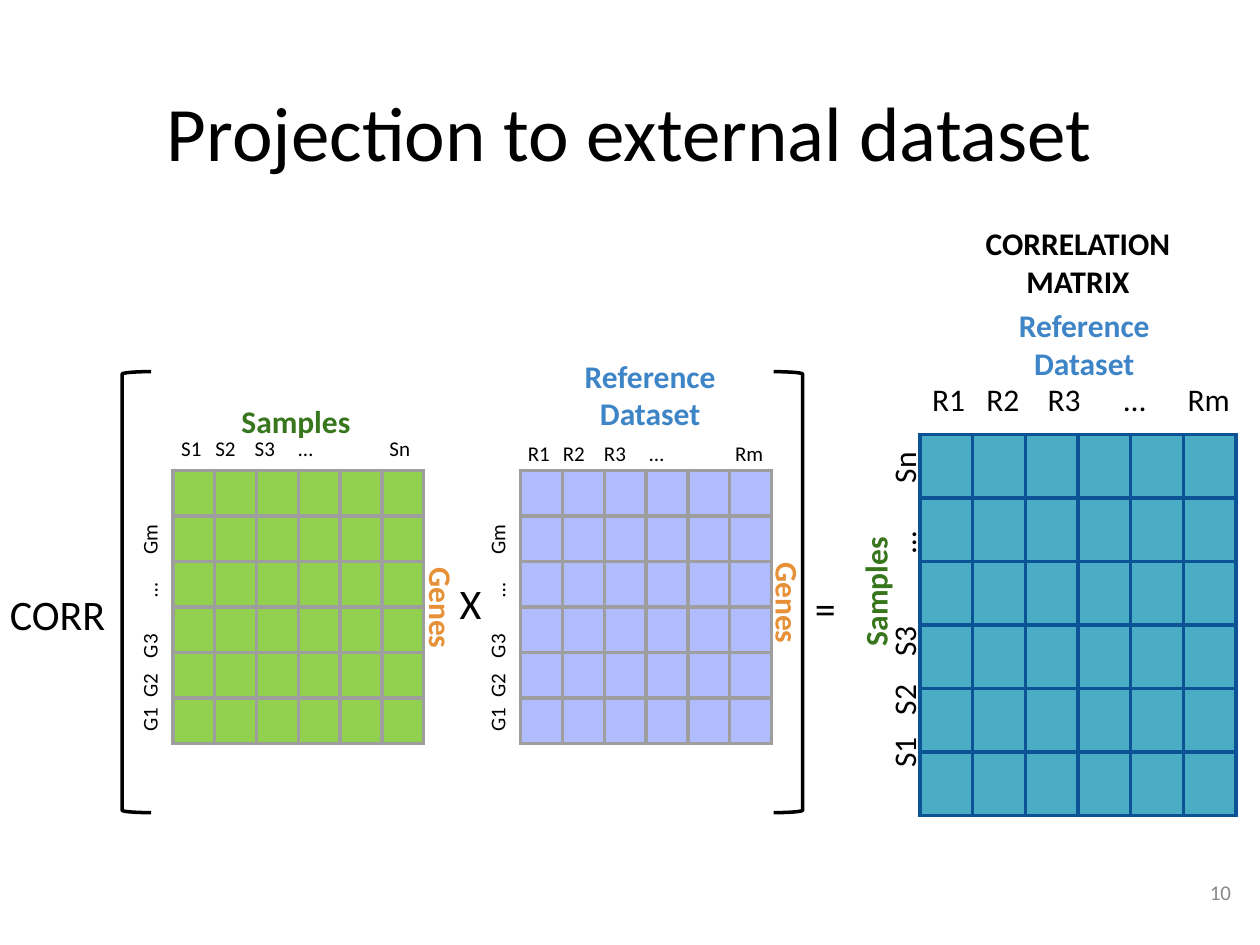
from dataclasses import dataclass

from lxml import etree
from pptx import Presentation
from pptx.dml.color import RGBColor
from pptx.enum.shapes import MSO_SHAPE
from pptx.enum.text import MSO_ANCHOR, MSO_AUTO_SIZE, PP_ALIGN
from pptx.oxml.ns import qn
from pptx.util import Pt

LEFT, CENTER, RIGHT = PP_ALIGN.LEFT, PP_ALIGN.CENTER, PP_ALIGN.RIGHT
TOP, MIDDLE = MSO_ANCHOR.TOP, MSO_ANCHOR.MIDDLE
LEFT_BRACKET, RIGHT_BRACKET = MSO_SHAPE.LEFT_BRACKET, MSO_SHAPE.RIGHT_BRACKET
TITLE_ONLY = 5
UPWARD, DOWNWARD = 270, 90


@dataclass(frozen=True)
class Theme:
    font: str = "Calibri"
    black: str = "000000"
    samples: str = "38761D"
    reference: str = "3D85C6"
    genes: str = "E69138"
    page_number: str = "898989"
    sample_cell: str = "92D050"
    reference_cell: str = "B1BCFF"
    correlation_cell: str = "4BACC6"
    gray_border: str = "9E9E9E"
    blue_border: str = "0B5394"
    title_size: int = 44
    operator_size: int = 24
    label_size: int = 18
    small_size: int = 12
    border_width: float = 2.25
    bracket_width: int = 2
    inset: float = 7.2


class MatrixSlide:
    """Draws the elements of one slide; all lengths are in points."""

    def __init__(self, slide, theme):
        self.slide = slide
        self.theme = theme

    def fill_frame(self, frame, lines, size, color, bold=False, align=LEFT,
                   anchor=TOP, tabs=()):
        frame.word_wrap = True
        frame.auto_size = MSO_AUTO_SIZE.NONE
        frame.vertical_anchor = anchor
        frame.margin_left = frame.margin_right = Pt(self.theme.inset)
        frame.margin_top = frame.margin_bottom = Pt(self.theme.inset)
        frame.text = "\n".join(lines)
        for paragraph in frame.paragraphs:
            paragraph.alignment = align
            if tabs:
                tab_list = etree.SubElement(
                    paragraph._p.get_or_add_pPr(), qn("a:tabLst"))
                for position in tabs:
                    etree.SubElement(tab_list, qn("a:tab"),
                                     pos=str(Pt(position)), algn="l")
            font = paragraph.font
            font.name = self.theme.font
            font.size = Pt(size)
            font.bold = bold
            font.color.rgb = RGBColor.from_string(color)

    def title(self, text, left, top, width, height):
        shape = self.slide.shapes.title
        shape.left, shape.top = Pt(left), Pt(top)
        shape.width, shape.height = Pt(width), Pt(height)
        self.fill_frame(shape.text_frame, [text], self.theme.title_size,
                        self.theme.black, align=CENTER)

    def text(self, lines, left, top, width, height, size, color,
             rotation=0, **style):
        shape = self.slide.shapes.add_textbox(
            Pt(left), Pt(top), Pt(width), Pt(height))
        shape.rotation = rotation
        self.fill_frame(shape.text_frame, lines, size, color, **style)

    def heading(self, lines, left, top, width, height, color, rotation=0):
        self.text(lines, left, top, width, height, self.theme.label_size,
                  color, rotation, bold=True, align=CENTER)

    def operator(self, symbol, left, top, width):
        self.text([symbol], left, top, width, 43,
                  self.theme.operator_size, self.theme.black)

    def axis(self, labels, tabs, left, top, width, height, size, rotation=0):
        self.text(["\t".join(labels)], left, top, width, height, size,
                  self.theme.black, rotation, tabs=tabs)

    def matrix(self, left, top, column_width, row_height, fill, border, count=6):
        table = self.slide.shapes.add_table(
            count, count, Pt(left), Pt(top),
            Pt(column_width * count), Pt(row_height * count)).table
        table.first_row = table.horz_banding = False
        for column in table.columns:
            column.width = Pt(column_width)
        for row in table.rows:
            row.height = Pt(row_height)
        for cell in table.iter_cells():
            cell.margin_left = cell.margin_right = 0
            cell.margin_top = cell.margin_bottom = 0
            self.cell_borders(cell, border)
            cell.fill.solid()
            cell.fill.fore_color.rgb = RGBColor.from_string(fill)

    def cell_borders(self, cell, color):
        properties = cell._tc.get_or_add_tcPr()
        for side in ("lnL", "lnR", "lnT", "lnB"):
            line = etree.SubElement(properties, qn(f"a:{side}"),
                                    w=str(Pt(self.theme.border_width)))
            solid = etree.SubElement(line, qn("a:solidFill"))
            etree.SubElement(solid, qn("a:srgbClr"), val=color)

    def bracket(self, kind, left, top, width, height):
        shape = self.slide.shapes.add_shape(
            kind, Pt(left), Pt(top), Pt(width), Pt(height))
        shape.shadow.inherit = False
        shape.fill.background()
        shape.line.color.rgb = RGBColor.from_string(self.theme.black)
        shape.line.width = Pt(self.theme.bracket_width)


def main():
    presentation = Presentation()
    presentation.slide_width, presentation.slide_height = Pt(720), Pt(540)
    slide = presentation.slides.add_slide(presentation.slide_layouts[TITLE_ONLY])
    theme = Theme()
    page = MatrixSlide(slide, theme)
    small, large = theme.small_size, theme.label_size
    samples = ["S1", "S2", "S3", "…", "Sn"]
    references = ["R1", "R2", "R3", "…", "Rm"]
    genes = ["G1", "G2", "G3", "…", "Gm"]

    page.title("Projection to external dataset", 24.5, 41, 671, 45.4)

    # Input matrices with their gene axes
    for left, fill in ((98.8, theme.sample_cell), (297.5, theme.reference_cell)):
        page.matrix(left, 268.8, 23.9, 26.05, fill, theme.gray_border)
        page.axis(genes, (19.5, 42, 76.5, 101), left - 89.4, 325.4, 161.3, 38.2,
                  small, UPWARD)

    # Sample matrix labels
    page.heading(["Samples"], 127.4, 222.5, 83.5, 24.5, theme.samples)
    page.axis(samples, (19.5, 42, 67, 119), 96.5, 241.9, 148.3, 48.2, small)
    page.heading(["Genes"], 211, 331.9, 87.8, 31, theme.genes, DOWNWARD)

    # Reference matrix labels
    page.heading(["Reference", "Dataset"], 298.8, 196.6, 145.4, 31,
                 theme.reference)
    page.axis(references, (20, 43.5, 69.5, 118.5), 294.5, 244.8, 157, 48.2, small)
    page.heading(["Genes"], 413.3, 329, 79.2, 31, theme.genes, DOWNWARD)

    # Correlation matrix and labels
    page.matrix(525.6, 248.4, 30.15, 36.3, theme.correlation_cell,
                theme.blue_border)
    page.heading(["CORRELATION MATRIX"], 537.1, 121, 157.7, 51.1, theme.black)
    page.heading(["Reference", "Dataset"], 546.5, 167.8, 146.2, 31,
                 theme.reference)
    page.heading(["Samples"], 457.9, 322.6, 79.2, 31, theme.samples, UPWARD)
    page.axis(references, (31, 66, 109.5, 146), 525.6, 210.2, 194.4, 48.2, large)
    page.axis(samples, (30, 63.5, 122.5, 162.5), 421.2, 320.4, 202.3, 48.2,
              large, UPWARD)

    # Formula
    page.operator("CORR", -1.4, 329, 86.4)
    page.operator("X", 255.6, 322.6, 25.9)
    page.operator("=", 458.6, 325.4, 23)
    page.bracket(LEFT_BRACKET, 69.8, 212.4, 16.6, 252)
    page.bracket(RIGHT_BRACKET, 442.1, 212.4, 16.6, 252)

    # Page number
    page.text(["10"], 667.4, 489.6, 43.2, 41, small, theme.page_number,
              align=RIGHT, anchor=MIDDLE)

    presentation.save("out.pptx")


if __name__ == "__main__":
    main()
